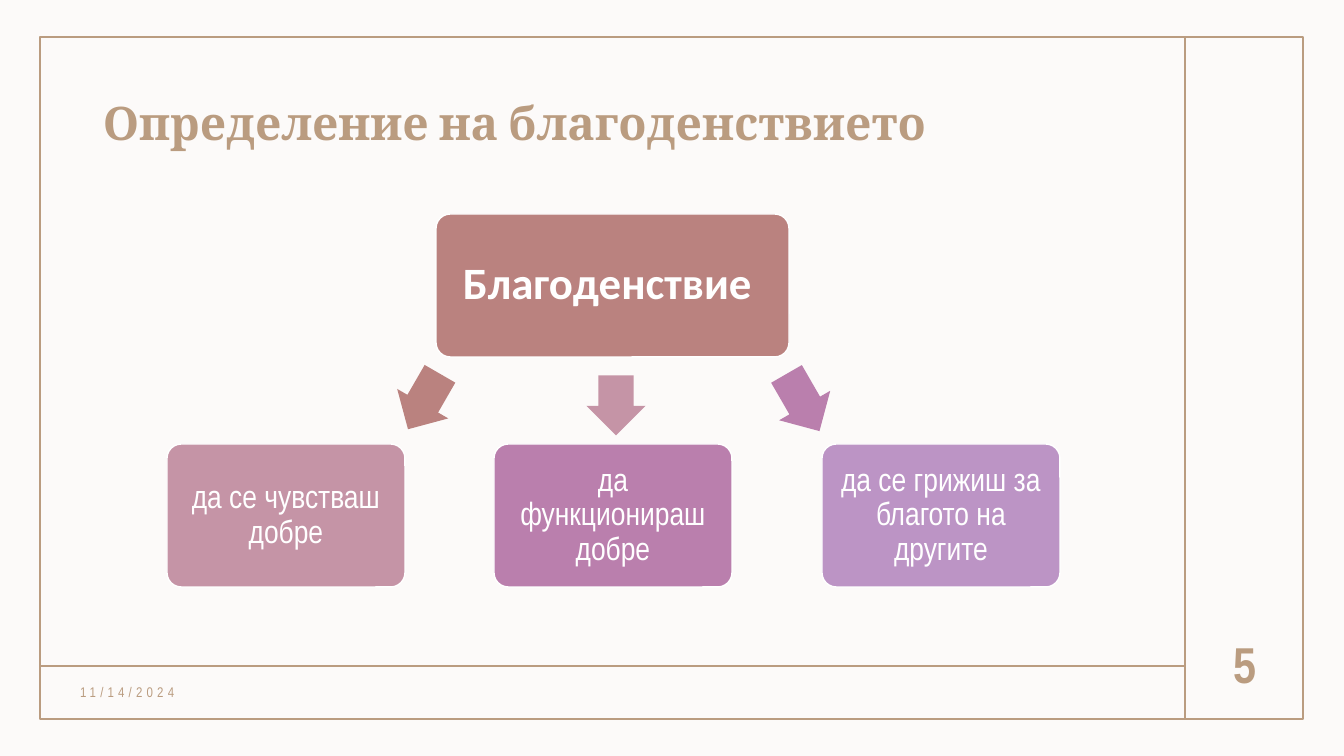
"""Builds the slide that defines wellbeing as a three-way diagram."""
from lxml import etree
from pptx import Presentation, util as u
from pptx.dml.color import RGBColor
from pptx.enum import shapes, text
from pptx.oxml.ns import qn

PX = u.Inches(7.5) / 756
COLORS = {"paper": "FCFAF9", "tan": "BA9C80", "white": "FFFFFF", "clay": "BA827F",
          "rose": "C594A6", "orchid": "BA7FAD", "lilac": "BC94C5"}
SHAPE = shapes.MSO_SHAPE


def emu(*lengths):
    return [round(n * PX) for n in lengths]


def write(sp, words, font, size, color, bold=False, align=text.PP_ALIGN.CENTER, inset=(10, 5)):
    tf = sp.text_frame
    tf.word_wrap = True
    tf.vertical_anchor = text.MSO_ANCHOR.MIDDLE
    tf.margin_left = tf.margin_right = emu(inset[0])[0]
    tf.margin_top = tf.margin_bottom = emu(inset[1])[0]
    p = tf.paragraphs[0]
    p.text = words
    p.alignment = align
    p.line_spacing = 0.9
    p.font.name, p.font.size, p.font.bold = font, u.Pt(size), bold
    p.font.color.rgb = RGBColor.from_string(COLORS[color])
    return p


prs = Presentation()
prs.slide_width, prs.slide_height = emu(1344, 756)
s = prs.slides.add_slide(prs.slide_layouts[6])
s.background.fill.solid()
s.background.fill.fore_color.rgb = RGBColor.from_string(COLORS["paper"])

frame = s.shapes.add_shape(SHAPE.RECTANGLE, *emu(40, 37, 1263, 682))
frame.shadow.inherit = False
frame.fill.background()
frame.line.color.rgb = RGBColor.from_string(COLORS["tan"])
frame.line.width = u.Pt(1)

for ends in [(1185, 37, 1185, 719), (41, 666, 1185, 666)]:
    rule = s.shapes.add_connector(shapes.MSO_CONNECTOR.STRAIGHT, *emu(*ends))
    rule.line.color.rgb = RGBColor.from_string(COLORS["tan"])
    rule.line.width = u.Pt(1)
    etree.SubElement(rule._element.spPr, qn("a:effectLst"))

title = s.shapes.add_textbox(*emu(93, 87, 1048, 78))
write(title, "Определение на благоденствието", "Cambria", 33, "tan", True, text.PP_ALIGN.LEFT)
date = s.shapes.add_textbox(*emu(70, 677, 348, 31))
p = write(date, "11/14/2024", "Arial Narrow", 10, "tan", align=text.PP_ALIGN.LEFT)
p.runs[0]._r.get_or_add_rPr().set("spc", "300")
number = s.shapes.add_textbox(*emu(1192, 625, 105, 84))
write(number, "5", "Arial Narrow", 36, "tan", True)

boxes = [
    (436, 214, 353, "clay", "Благоденствие ", "Calibri", 32, True, 17),
    (167, 444, 238, "rose", "да се чувстваш добре", "Arial Narrow", 23, False, 14),
    (494, 444, 238, "orchid", "да функционираш добре", "Arial Narrow", 23, False, 14),
    (822, 444, 238, "lilac", "да се грижиш за благото на другите", "Arial Narrow", 23, False, 14),
]
for x, y, w, color, words, font, size, bold, inset in boxes:
    sp = s.shapes.add_shape(SHAPE.ROUNDED_RECTANGLE, *emu(x, y, w, 143))
    sp.adjustments[0] = 0.1
    sp.shadow.inherit = False
    sp.fill.solid()
    sp.fill.fore_color.rgb = RGBColor.from_string(COLORS[color])
    sp.line.color.rgb = RGBColor.from_string(COLORS["white"])
    sp.line.width = u.Pt(1)
    write(sp, words, font, size, "white", bold, inset=(inset, inset))

for x, y, w, angle, color in [(392, 372, 64, 120, "clay"), (586, 376, 60, 90, "rose"),
                              (770, 373, 66, 60, "orchid")]:
    arrow = s.shapes.add_shape(SHAPE.RIGHT_ARROW, *emu(x, y, w, 59))
    arrow.adjustments[0] = 0.6
    arrow.rotation = angle
    arrow.shadow.inherit = False
    arrow.fill.solid()
    arrow.fill.fore_color.rgb = RGBColor.from_string(COLORS[color])
    arrow.line.fill.background()

prs.save("out.pptx")
